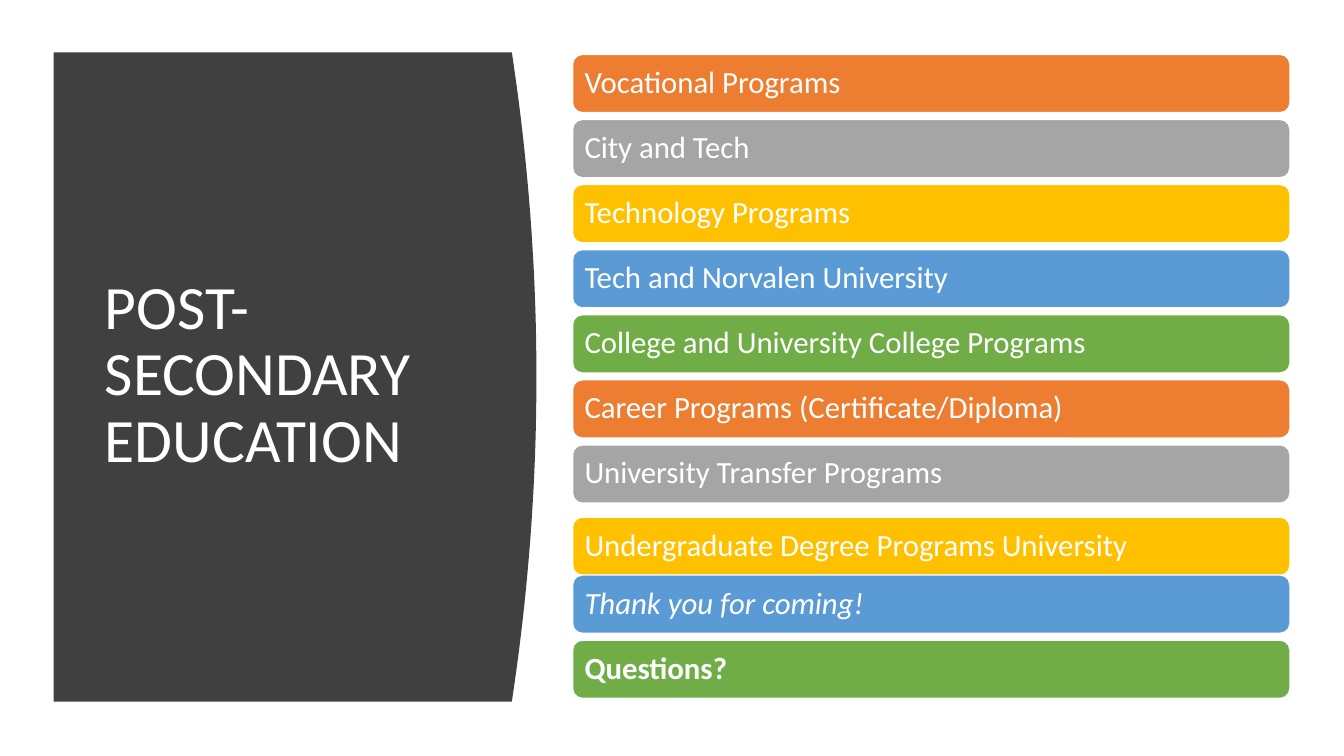
from pptx import Presentation
from pptx.dml.color import RGBColor
from pptx.enum.shapes import MSO_SHAPE
from pptx.enum.text import MSO_ANCHOR, PP_ALIGN
from pptx.util import Cm, Pt

TITLE = "POST-SECONDARY EDUCATION"
# text, font style, extra downward shift in cm
BARS = [
    ("Vocational Programs", {}, 0),
    ("City and Tech", {}, 0),
    ("Technology Programs", {}, 0),
    ("Tech and Norvalen University", {}, 0),
    ("College and University College Programs", {}, 0),
    ("Career Programs (Certificate/Diploma)", {}, 0),
    ("University Transfer Programs", {}, 0),
    ("Undergraduate Degree Programs University", {}, 0.18),
    ("Thank you for coming!", {"italic": True}, 0),
    ("Questions?", {"bold": True}, 0),
]
BAR_COLORS = ["ED7D31", "A5A5A5", "FFC000", "5B9BD5", "70AD47"]
WHITE, PANEL_COLOR = "FFFFFF", "404040"

BAR_LEFT, BAR_TOP, BAR_W, BAR_H, BAR_PITCH = 14.43, 1.37, 18.08, 1.47, 1.64
PANEL_LEFT, PANEL_TOP, PANEL_EDGE, PANEL_H = 1.35, 1.32, 12.9, 16.36
BULGE, CURVE_STEPS = 0.62, 40


def rgb(color):
    return RGBColor.from_string(color)


def write(shape, text, size, color=WHITE, bold=False, italic=False):
    tf = shape.text_frame
    tf.word_wrap = True
    tf.vertical_anchor = MSO_ANCHOR.MIDDLE
    p = tf.paragraphs[0]
    p.alignment = PP_ALIGN.LEFT
    p.line_spacing = 0.9
    r = p.add_run()
    r.text = text
    r.font.name = "Calibri"
    r.font.size = Pt(size)
    r.font.bold = bold
    r.font.italic = italic
    r.font.color.rgb = rgb(color)


def add_panel(s):
    """Dark panel whose right edge bows outward as a parabola."""
    curve = []
    for i in range(CURVE_STEPS + 1):
        t = i / CURVE_STEPS
        x = PANEL_EDGE + BULGE * 4 * t * (1 - t)
        curve.append((Cm(x), Cm(PANEL_TOP + PANEL_H * t)))
    builder = s.shapes.build_freeform(Cm(PANEL_LEFT), Cm(PANEL_TOP))
    builder.add_line_segments(curve + [(Cm(PANEL_LEFT), Cm(PANEL_TOP + PANEL_H))])
    panel = builder.convert_to_shape()
    panel.shadow.inherit = False
    panel.fill.solid()
    panel.fill.fore_color.rgb = rgb(PANEL_COLOR)
    panel.line.fill.background()
    s.shapes.title._element.addprevious(panel._element)  # behind the title


def add_bar(s, i, text, style, shift):
    top = BAR_TOP + i * BAR_PITCH + shift
    bar = s.shapes.add_shape(MSO_SHAPE.ROUNDED_RECTANGLE, Cm(BAR_LEFT), Cm(top),
                             Cm(BAR_W), Cm(BAR_H))
    bar.shadow.inherit = False
    bar.fill.solid()
    bar.fill.fore_color.rgb = rgb(BAR_COLORS[i % len(BAR_COLORS)])
    bar.line.color.rgb = rgb(WHITE)
    bar.line.width = Pt(1)
    tf = bar.text_frame
    tf.margin_left = tf.margin_right = tf.margin_top = tf.margin_bottom = Cm(0.23)
    write(bar, text, 22, **style)


def main():
    prs = Presentation()
    prs.slide_width, prs.slide_height = Cm(33.87), Cm(19.05)
    s = prs.slides.add_slide(prs.slide_layouts[5])
    title = s.shapes.title
    title.left, title.top, title.width, title.height = Cm(2.39), Cm(2.82), Cm(9.5), Cm(13.31)
    write(title, TITLE, 44)
    add_panel(s)
    for i, (text, style, shift) in enumerate(BARS):
        add_bar(s, i, text, style, shift)
    prs.save("out.pptx")


if __name__ == "__main__":
    main()
